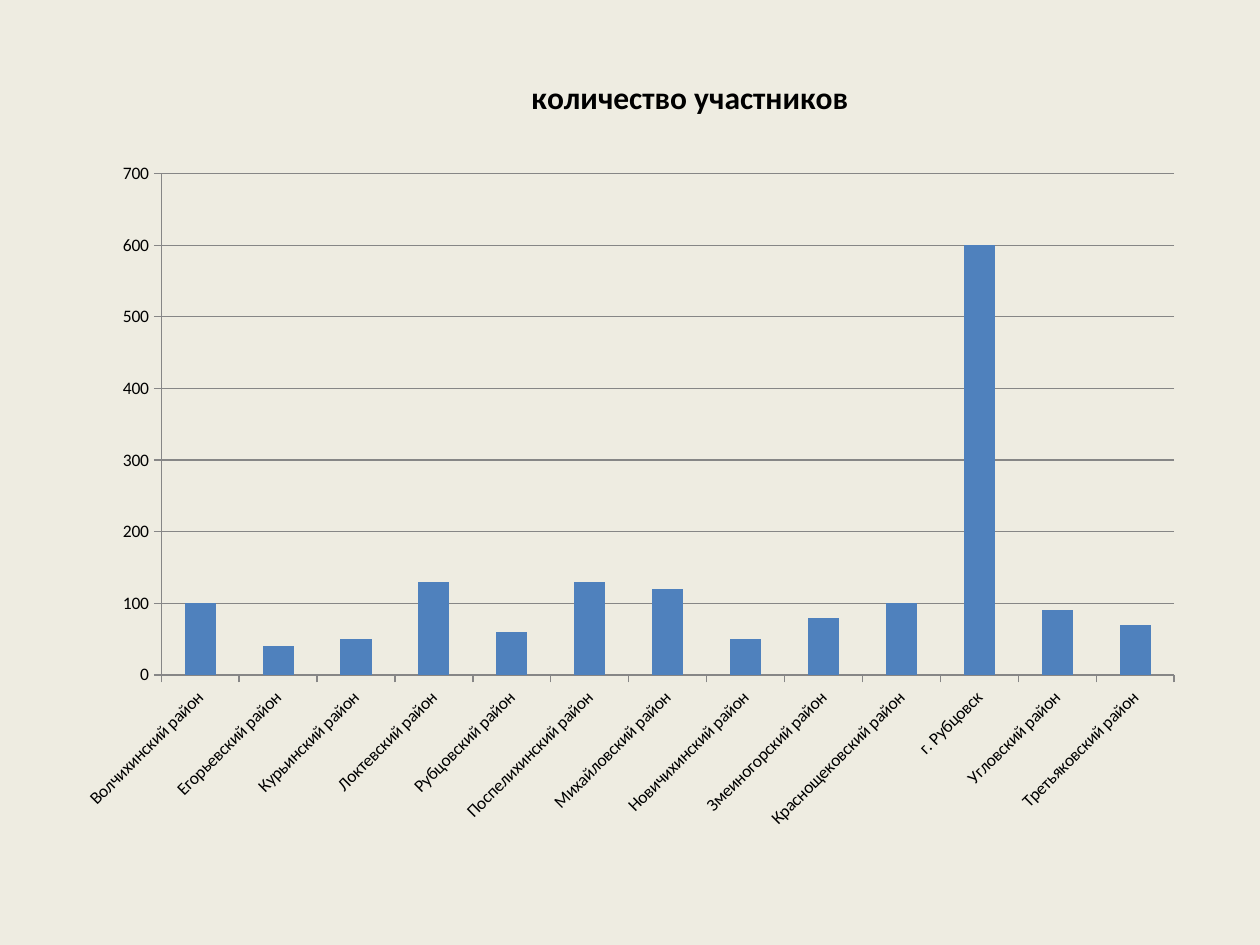
from pptx import Presentation
from pptx.chart.data import CategoryChartData
from pptx.dml.color import RGBColor
from pptx.enum.chart import XL_CHART_TYPE, XL_TICK_MARK
from pptx.oxml import parse_xml
from pptx.oxml.ns import nsdecls, qn
from pptx.util import Cm, Pt

COLUMNS = XL_CHART_TYPE.COLUMN_CLUSTERED
TICK_OUT, TICK_NONE = XL_TICK_MARK.OUTSIDE, XL_TICK_MARK.NONE

# Content
TITLE = "количество участников"
PARTICIPANTS = {
    "Волчихинский район": 100,
    "Егорьевский район": 40,
    "Курьинский район": 50,
    "Локтевский район": 130,
    "Рубцовский район": 60,
    "Поспелихинский район": 130,
    "Михайловский район": 120,
    "Новичихинский район": 50,
    "Змеиногорский район": 80,
    "Краснощековский район": 100,
    "г. Рубцовск": 600,
    "Угловский район": 90,
    "Третьяковский район": 70,
}
COLORS = {"background": "EEECE1", "text": "000000", "column": "4F81BD", "line": "868686"}
FONT = "Calibri"

# Places in centimetres; title and plot are measured from the chart's corner
CHART_PLACE = {"x": 1.27, "y": 1.4, "w": 22.86, "h": 15.62}
TITLE_PLACE = {"x": 9.33, "y": 0}
PLOT_PLACE = {"x": 1.98, "y": 2.1, "w": 20.42, "h": 10.11}


def color(name):
    return RGBColor.from_string(COLORS[name])


def style_font(font, size, bold=False):
    font.name, font.size, font.bold = FONT, Pt(size), bold
    font.color.rgb = color("text")


def style_line(line):
    line.color.rgb = color("line")
    line.width = Pt(0.75)


def place(parent, index, lengths, target=""):
    """Give a chart part a fixed position, as fractions of the chart's size."""
    for old in parent.findall(qn("c:layout")):
        parent.remove(old)
    whole = {"x": CHART_PLACE["w"], "y": CHART_PLACE["h"],
             "w": CHART_PLACE["w"], "h": CHART_PLACE["h"]}
    modes = "".join(f'<c:{key}Mode val="edge"/>' for key in "xy")
    values = "".join(f'<c:{key} val="{length / whole[key]:.4f}"/>'
                     for key, length in lengths.items())
    parent.insert(index, parse_xml(
        f'<c:layout {nsdecls("c")}><c:manualLayout>{target}{modes}{values}'
        "</c:manualLayout></c:layout>"))


# Slide
deck = Presentation()
deck.slide_width, deck.slide_height = Cm(25.4), Cm(19.05)
slide = deck.slides.add_slide(deck.slide_layouts[6])
slide.background.fill.solid()
slide.background.fill.fore_color.rgb = color("background")

# Chart
data = CategoryChartData(number_format="0")
data.categories = list(PARTICIPANTS)
data.add_series(TITLE, list(PARTICIPANTS.values()))
chart = slide.shapes.add_chart(
    COLUMNS, *(Cm(length) for length in CHART_PLACE.values()), data).chart
style_font(chart.font, 10)
chart.has_legend = False

# Title
chart.has_title = True
span = chart.chart_title.text_frame.paragraphs[0].add_run()
span.text = TITLE
style_font(span.font, 18, bold=True)

# Columns
plot = chart.plots[0]
plot.gap_width = 150
plot.vary_by_categories = False
column_fill = plot.series[0].format.fill
column_fill.solid()
column_fill.fore_color.rgb = color("column")

# Axes
for axis in (chart.category_axis, chart.value_axis):
    axis.major_tick_mark, axis.minor_tick_mark = TICK_OUT, TICK_NONE
    style_line(axis.format.line)
    style_font(axis.tick_labels.font, 10)
value_axis = chart.value_axis
value_axis.minimum_scale, value_axis.maximum_scale, value_axis.major_unit = 0, 700, 100
value_axis.tick_labels.number_format = "0"
value_axis.tick_labels.number_format_is_linked = False
value_axis.has_major_gridlines = True
style_line(value_axis.major_gridlines.format.line)

# Slanted category labels and fixed positions
root = chart.element
root.xpath(".//c:catAx/c:txPr/a:bodyPr")[0].set("rot", str(-45 * 60000))
place(root.xpath("c:chart/c:title")[0], 1, TITLE_PLACE)
place(root.xpath("c:chart/c:plotArea")[0], 0, PLOT_PLACE, '<c:layoutTarget val="inner"/>')

deck.save("out.pptx")
